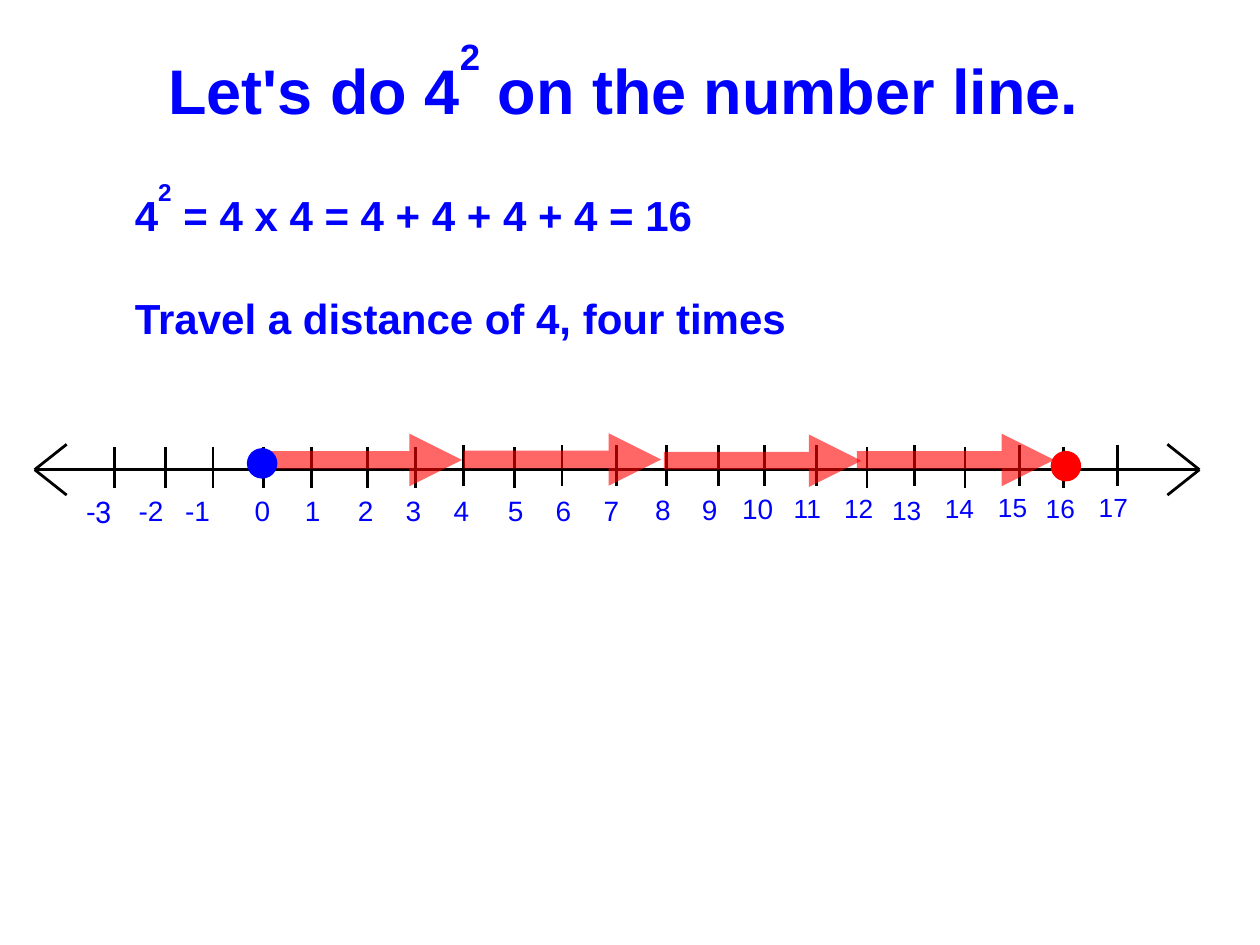
from lxml.etree import SubElement
from pptx import Presentation
from pptx.dml.color import RGBColor
from pptx.enum.shapes import MSO_CONNECTOR, MSO_SHAPE
from pptx.enum.text import MSO_AUTO_SIZE, PP_ALIGN
from pptx.oxml.ns import qn
from pptx.util import Pt

BLUE, RED, BLACK = "0000FF", "FF0000", "000000"
FIRST = -3
AXIS_Y, AXIS_LEFT, AXIS_RIGHT = 268.4, 19.8, 685.4
HEAD_W, HEAD_H = 18.3, 14.5
TICK_H = 23.6
ARROW_LEN = 112.8

# Hand-placed marks from -3 to 17
TICK_X = [65.6, 94.4, 121.8, 150.5, 177.8, 209.8, 237.6, 264.9, 293.8, 321.1, 352.1,
          380.9, 410.4, 436.7, 466.6, 495.4, 522.7, 551.5, 582.5, 607.7, 638.6]
LOW_TICKS = {-3, -2, -1, 0, 1, 2, 3, 5, 12, 14, 16}
LABEL_X = [43.9, 73.4, 100.1, 139.7, 168.5, 198.7, 226.1, 253.4, 284.4, 311.8, 339.1,
           368.6, 395.3, 418.3, 447.8, 476.6, 504, 534.2, 564.5, 591.8, 622.1]
LABEL_Y = {8: 278.6, 9: 278.6, 10: 277.9, 11: 278.6, 12: 278.6, 14: 278.6,
           15: 277.9, 16: 278.6, 17: 277.9}


def rgb(color):
    return RGBColor.from_string(color)


def add_line(s, x1, y1, x2, y2, color=BLACK, width=1.6):
    line = s.shapes.add_connector(MSO_CONNECTOR.STRAIGHT, Pt(x1), Pt(y1), Pt(x2), Pt(y2))
    line.line.color.rgb = rgb(color)
    line.line.width = Pt(width)
    SubElement(line._element.spPr, qn("a:effectLst"))
    return line


def add_jump(s, x, y):
    """Translucent red arrow covering four units."""
    ln = add_line(s, x, y, x + ARROW_LEN, y, RED, 10).line._get_or_add_ln()
    SubElement(ln.find(".//" + qn("a:srgbClr")), qn("a:alpha"), val="60000")
    SubElement(ln, qn("a:tailEnd"), type="triangle")


def add_dot(s, x, y, color):
    dot = s.shapes.add_shape(MSO_SHAPE.OVAL, Pt(x), Pt(y), Pt(14.4), Pt(14.4))
    dot.shadow.inherit = False
    dot.fill.solid()
    dot.fill.fore_color.rgb = rgb(color)
    dot.line.color.rgb = rgb(color)
    dot.line.width = Pt(3)


def add_box(s, x, y, w, h):
    tf = s.shapes.add_textbox(Pt(x), Pt(y), Pt(w), Pt(h)).text_frame
    tf.word_wrap = True
    tf.auto_size = MSO_AUTO_SIZE.SHAPE_TO_FIT_TEXT
    tf.margin_left = tf.margin_right = Pt(5.76)
    tf.margin_top = tf.margin_bottom = Pt(2.88)
    return tf


def add_run(p, text, size, bold=False, font="Arial", raised=False):
    r = p.add_run()
    r.text = text
    r.font.size = Pt(size)
    r.font.name = font
    r.font.bold = bold
    r.font.color.rgb = rgb(BLUE)
    if raised:
        r._r.get_or_add_rPr().set("baseline", "70000")


def add_square(p, before, after, size):
    """Bold text with a raised 2 between its two parts."""
    add_run(p, before, size, True)
    add_run(p, "2", size, True, raised=True)
    add_run(p, after, size, True)


def add_axis(s):
    add_line(s, AXIS_LEFT, AXIS_Y, AXIS_RIGHT, AXIS_Y)
    for tip, side in ((AXIS_LEFT, 1), (AXIS_RIGHT, -1)):
        for dy in (-HEAD_H, HEAD_H):
            add_line(s, tip, AXIS_Y, tip + side * HEAD_W, AXIS_Y + dy)
    for n, x in enumerate(TICK_X, FIRST):
        top = 255.4 if n in LOW_TICKS else 254.4
        add_line(s, x, top, x, top + TICK_H)


def add_labels(s):
    for n, x in enumerate(LABEL_X, FIRST):
        width = 59 if n >= 10 else 46.8 if n >= 0 else 54
        size, font = (15 if n > 10 else 16), "Arial"
        if n == FIRST:
            width, size, font = 57.6, 17, "Roboto"
        tf = add_box(s, x, LABEL_Y.get(n, 279.4), width, size * 1.15 + 6.5)
        add_run(tf.paragraphs[0], str(n), size, font=font)


def main():
    prs = Presentation()
    prs.slide_width, prs.slide_height = Pt(720), Pt(540)
    s = prs.slides.add_slide(prs.slide_layouts[6])

    add_labels(s)
    add_axis(s)
    add_dot(s, 601.9, 259.2, RED)
    add_jump(s, 151.2, 262.8)
    add_dot(s, 142.6, 257.6, BLUE)

    p = add_box(s, 84.2, 16.6, 554.4, 49.7).paragraphs[0]
    p.alignment = PP_ALIGN.CENTER
    add_square(p, "Let's do 4", " on the number line. ", 36)

    tf = add_box(s, 71.3, 98.6, 426.2, 92.9)
    add_square(tf.paragraphs[0], "4", " = 4 x 4 = 4 + 4 + 4 + 4 = 16", 24)
    p = tf.add_paragraph()
    p.space_before = Pt(30)
    add_run(p, "Travel a distance of 4, four times", 24, True)

    for x, y in ((379.4, 263.3), (489.6, 262.8), (265, 262.6)):
        add_jump(s, x, y)

    prs.save("out.pptx")


if __name__ == "__main__":
    main()
